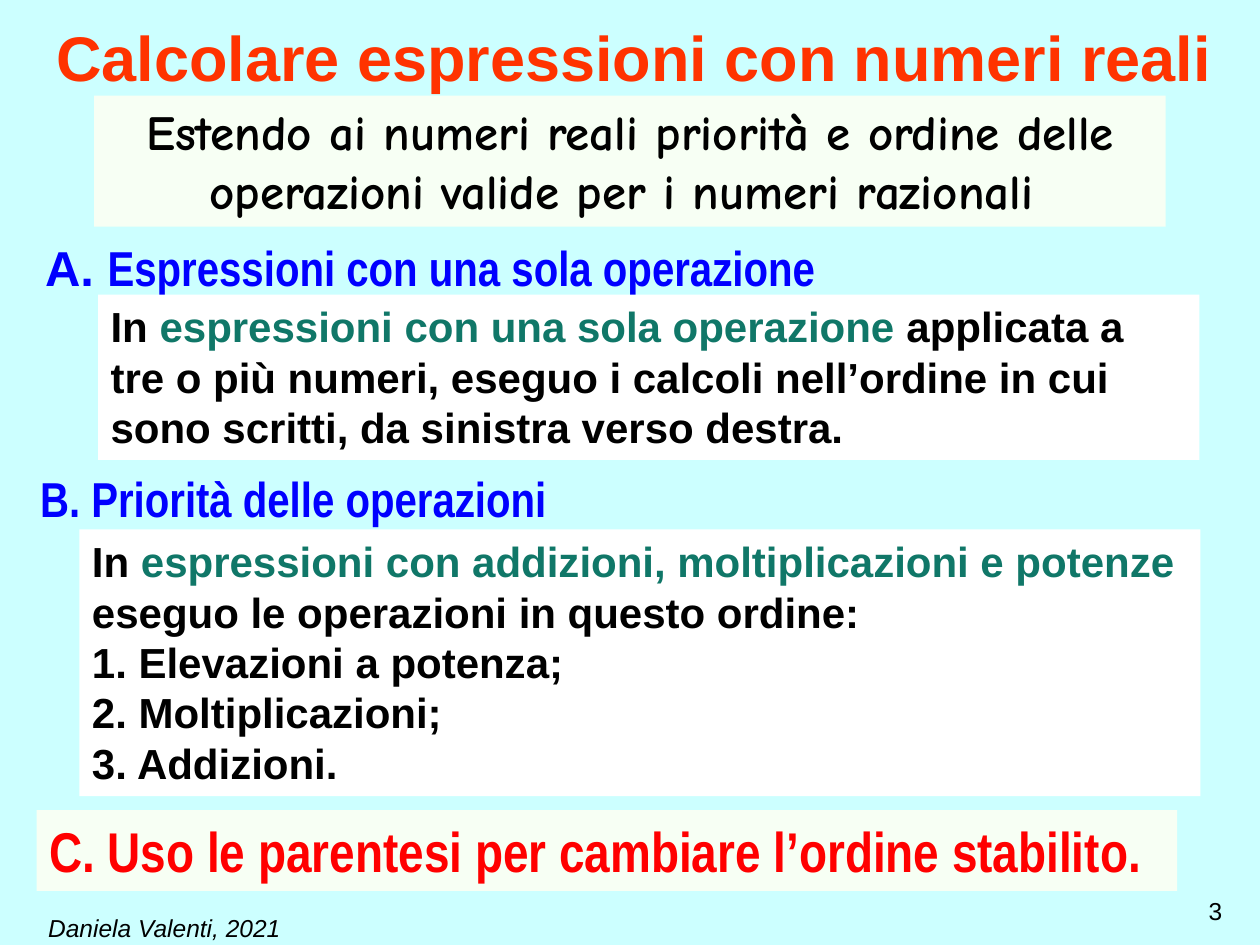
from lxml import etree
from pptx import Presentation
from pptx.dml.color import RGBColor
from pptx.enum.text import MSO_ANCHOR, MSO_AUTO_SIZE, PP_ALIGN
from pptx.util import Cm, Pt

LEFT, CENTER, RIGHT = PP_ALIGN.LEFT, PP_ALIGN.CENTER, PP_ALIGN.RIGHT
TOP, MIDDLE = MSO_ANCHOR.TOP, MSO_ANCHOR.MIDDLE
NO_AUTOFIT = MSO_AUTO_SIZE.NONE
DRAWING = "{http://schemas.openxmlformats.org/drawingml/2006/main}"

BACKGROUND, PALE, WHITE = "CCFFFF", "F7FFF4", "FFFFFF"
BLACK, BLUE, GREEN, RED, ORANGE = "000000", "0000FF", "107768", "FF0000", "FF3300"
SANS, NARROW, COMIC = "Arial", "Arial Narrow", "Comic Neue"


def paint(fill, color):
    fill.solid()
    fill.fore_color.rgb = RGBColor.from_string(color)


def place(shape, left, top, width, height, anchor=TOP, fill=None):
    """Set position in centimetres, text frame behaviour and background."""
    shape.left, shape.top = Cm(left), Cm(top)
    shape.width, shape.height = Cm(width), Cm(height)
    frame = shape.text_frame
    frame.word_wrap = True
    frame.auto_size = NO_AUTOFIT
    frame.vertical_anchor = anchor
    if fill:
        paint(shape.fill, fill)
    return shape


def add_box(slide, *position, fill=None):
    box = slide.shapes.add_textbox(0, 0, 0, 0)
    return place(box, *position, fill=fill)


def add_run(paragraph, text, size, color=BLACK, font=SANS, bold=True, italic=False):
    run = paragraph.add_run()
    run.text = text
    run.font.size = Pt(size)
    run.font.name = font
    run.font.bold = bold
    run.font.italic = italic
    paint(run.font.fill, color)


def write(shape, runs, size, align=LEFT, **style):
    """Fill the first paragraph with (text, color, font) runs."""
    paragraph = shape.text_frame.paragraphs[0]
    paragraph.alignment = align
    for text, color, font in runs:
        add_run(paragraph, text, size, color, font, **style)
    return paragraph


def set_bullet(paragraph, numbered):
    """Remove the template's indent and choose numbering or no bullet."""
    paragraph.space_before = Pt(0)
    properties = paragraph._p.get_or_add_pPr()
    properties.set("marL", "0")
    properties.set("indent", "0")
    if numbered:
        etree.SubElement(properties, DRAWING + "buFont", typeface="+mj-lt")
        etree.SubElement(properties, DRAWING + "buAutoNum", type="arabicPeriod")
    else:
        etree.SubElement(properties, DRAWING + "buNone")


def add_numbered_list(shape, items, size):
    for item in items:
        paragraph = shape.text_frame.add_paragraph()
        paragraph.alignment = LEFT
        set_bullet(paragraph, numbered=True)
        add_run(paragraph, " " + item, size)


def main():
    presentation = Presentation()
    presentation.slide_width, presentation.slide_height = Cm(25.4), Cm(19.05)
    slide = presentation.slides.add_slide(presentation.slide_layouts[1])
    paint(slide.background.fill, BACKGROUND)

    # Title and introduction
    title = place(slide.shapes.title, 0.58, 0.28, 24.41, 1.73, MIDDLE)
    write(title, [("Calcolare espressioni con numeri reali", ORANGE, SANS)], 36, CENTER)
    introduction = add_box(slide, 1.9, 1.93, 21.6, 2.64, fill=PALE)
    write(introduction, [("Estendo ai numeri reali priorità e ordine delle operazioni "
                          "valide per i numeri razionali ", BLACK, COMIC)], 28, CENTER)

    # A: a single operation
    heading_a = add_box(slide, 0.66, 4.67, 24.2, 1.45)
    write(heading_a, [("A. ", BLUE, SANS),
                      ("Espressioni con una sola operazione", BLUE, NARROW)], 28)
    rule_a = add_box(slide, 1.98, 5.94, 22.2, 3.33, fill=WHITE)
    write(rule_a, [("In ", BLACK, SANS),
                   ("espressioni con una sola operazione ", GREEN, SANS),
                   ("applicata a tre o più numeri, eseguo i calcoli nell’ordine in cui "
                    "sono scritti, da sinistra verso destra.", BLACK, SANS)], 24)

    # B: priority of operations
    heading_b = add_box(slide, 0.56, 9.32, 21.7, 1.45)
    write(heading_b, [("B. Priorità delle operazioni", BLUE, NARROW)], 28)
    rule_b = place(slide.placeholders[1], 1.6, 10.67, 22.6, 5.38, fill=WHITE)
    opening = write(rule_b, [
        ("In ", BLACK, SANS),
        ("espressioni con addizioni, moltiplicazioni e potenze ", GREEN, SANS),
        ("eseguo le operazioni in questo ordine:", BLACK, SANS)], 24)
    set_bullet(opening, numbered=False)
    add_numbered_list(rule_b, ["Elevazioni a potenza;", "Moltiplicazioni;", "Addizioni."], 24)

    # C: brackets
    rule_c = add_box(slide, 0.74, 16.33, 22.99, 1.63, fill=PALE)
    write(rule_c, [("C. Uso le parentesi per cambiare l’ordine stabilito.", RED, NARROW)], 32)

    # Footer: author and page number
    author = add_box(slide, 0.72, 18.29, 7, 0.76)
    write(author, [("Daniela Valenti, 2021", BLACK, SANS)], 14, bold=False, italic=True)
    page_number = add_box(slide, 18.97, 17.93, 5.92, 1.1)
    write(page_number, [("3", BLACK, SANS)], 14, RIGHT, bold=False)

    presentation.save("out.pptx")


if __name__ == "__main__":
    main()
